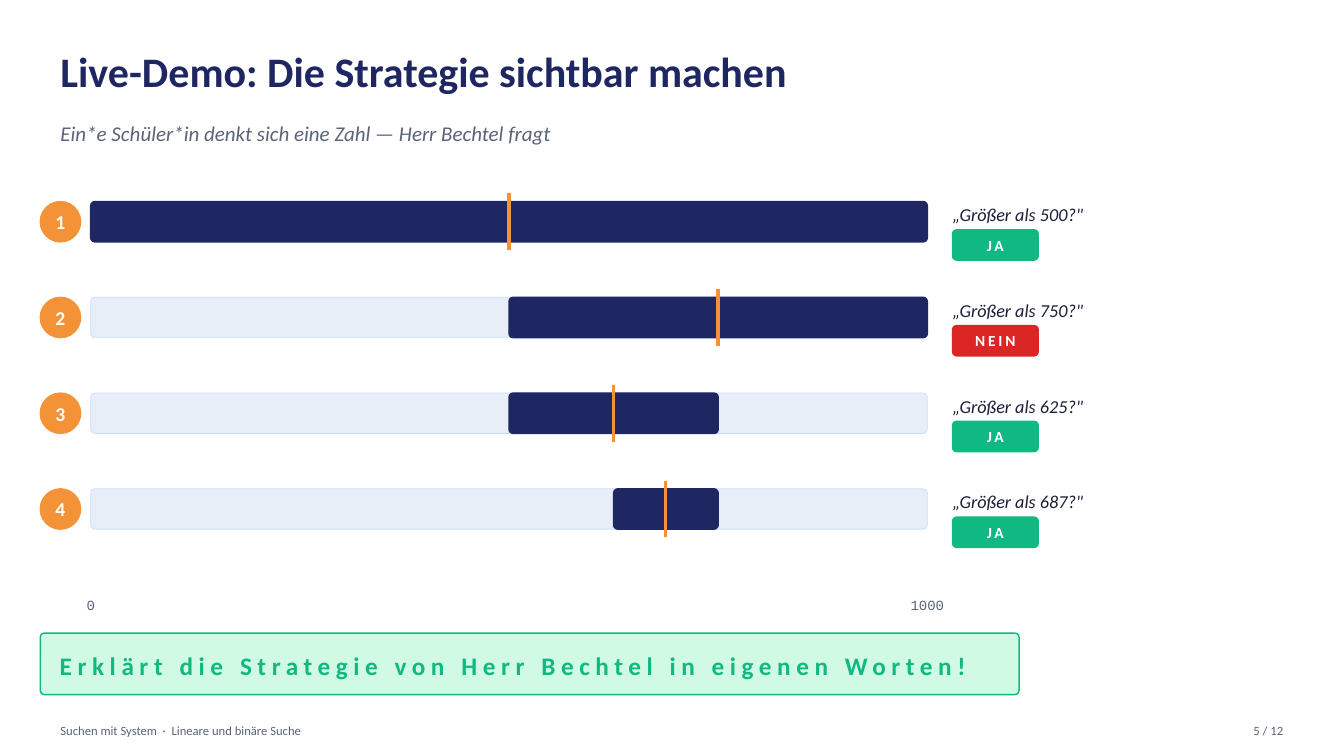
from lxml import etree
from pptx import Presentation
from pptx.dml.color import RGBColor
from pptx.enum import shapes, text
from pptx.oxml import ns
from pptx.util import Pt

NAVY = RGBColor(0x1E, 0x27, 0x61)
ORANGE = RGBColor(0xF3, 0x92, 0x37)
GREEN = RGBColor(0x10, 0xB9, 0x81)
MINT = RGBColor(0xD1, 0xFA, 0xE5)
RED = RGBColor(0xDC, 0x26, 0x26)
PALE = RGBColor(0xE8, 0xEE, 0xF7)
SKY = RGBColor(0xCA, 0xDC, 0xFC)
GREY = RGBColor(0x5A, 0x63, 0x78)
INK = RGBColor(0x1A, 0x1F, 0x36)
WHITE = RGBColor(0xFF, 0xFF, 0xFF)
ROUND = shapes.MSO_SHAPE.ROUNDED_RECTANGLE
OVAL = shapes.MSO_SHAPE.OVAL
LEFT, MID, RIGHT = text.PP_ALIGN.LEFT, text.PP_ALIGN.CENTER, text.PP_ALIGN.RIGHT
TOP, HALF = text.MSO_ANCHOR.TOP, text.MSO_ANCHOR.MIDDLE

deck = Presentation()
deck.slide_width, deck.slide_height = Pt(960), Pt(540)
slide = deck.slides.add_slide(deck.slide_layouts[5])
items = slide.shapes


def write(shape, words, size, color, align=LEFT, anchor=HALF, bold=False,
          italic=False, gap=0, face="Calibri", inset=(0, 0)):
    frame = shape.text_frame
    frame.word_wrap = True
    frame.auto_size = text.MSO_AUTO_SIZE.NONE
    frame.vertical_anchor = anchor
    frame.margin_left, frame.margin_top = Pt(inset[0]), Pt(inset[1])
    frame.margin_right = frame.margin_bottom = 0
    para = frame.paragraphs[0]
    para.alignment = align
    run = para.add_run()
    run.text = words
    font = run.font
    font.name, font.size, font.bold, font.italic = face, Pt(size), bold, italic
    font.color.rgb = color
    if gap:
        run._r.get_or_add_rPr().set("spc", str(gap * 100))


def block(kind, left, top, width, height, fill, edge=None, weight=1):
    shape = items.add_shape(kind, Pt(left), Pt(top), Pt(width), Pt(height))
    shape.shadow.inherit = False
    shape.fill.solid()
    shape.fill.fore_color.rgb = fill
    shape.line.color.rgb = edge or fill
    shape.line.width = Pt(weight)
    if kind == ROUND:
        shape.adjustments[0] = 2.88 / height
    return shape


title = items.title
title.left, title.top, title.width, title.height = Pt(43.2), Pt(32.4), Pt(873.4), Pt(54)
write(title, "Live-Demo: Die Strategie sichtbar machen", 30, NAVY, anchor=TOP, bold=True)

lead = items.add_textbox(Pt(43.2), Pt(86.4), Pt(873.4), Pt(28.8))
write(lead, "Ein*e Schüler*in denkt sich eine Zahl — Herr Bechtel fragt", 15, GREY,
      anchor=TOP, italic=True)

START, SPAN, BAR = 64.8, 597.6, 28.8
SCALE = SPAN / 1000
low, high = 0, 1000
for step, answer in enumerate(["JA", "NEIN", "JA", "JA"]):
    top = 144 + step * 68.4
    guess = (low + high) // 2
    badge = block(OVAL, 28.8, top, BAR, BAR, ORANGE)
    write(badge, str(step + 1), 14, WHITE, MID, bold=True)

    if high - low < 1000:
        block(ROUND, START, top, SPAN, BAR, PALE, SKY, 0.5)
    block(ROUND, START + low * SCALE, top, (high - low) * SCALE, BAR, NAVY)

    x = Pt(START + guess * SCALE)
    mark = items.add_connector(shapes.MSO_CONNECTOR.STRAIGHT, x, Pt(top - 5.8), x, Pt(top + 34.6))
    mark.line.color.rgb = ORANGE
    mark.line.width = Pt(2.5)
    etree.SubElement(mark._element.spPr, ns.qn("a:effectLst"))

    query = items.add_textbox(Pt(680.4), Pt(top - 3.6), Pt(180), Pt(25.2))
    write(query, f'„Größer als {guess}?"', 13, INK, italic=True)
    reply = block(ROUND, 680.4, top + 20.2, 61.2, 21.6, GREEN if answer == "JA" else RED)
    write(reply, answer, 11, WHITE, MID, bold=True, gap=2)

    if answer == "JA":
        low = guess
    else:
        high = guess

for value, left, width in [("0", 54, 21.6), ("1000", 644.4, 36)]:
    tick = items.add_textbox(Pt(left), Pt(421.2), Pt(width), Pt(21.6))
    write(tick, value, 10, GREY, MID, face="Courier New")

task = block(ROUND, 28.8, 452.2, 699.1, 43.9, MINT, GREEN)
write(task, "Erklärt die Strategie von Herr Bechtel in eigenen Worten!", 18, GREEN,
      bold=True, gap=4, inset=(13, 2))

for words, left, width, align in [
    ("Suchen mit System  ·  Lineare und binäre Suche", 43.2, 576, LEFT),
    ("5 / 12", 859, 57.6, RIGHT),
]:
    foot = items.add_textbox(Pt(left), Pt(511.2), Pt(width), Pt(21.6))
    write(foot, words, 9, GREY, align)

deck.save("out.pptx")
